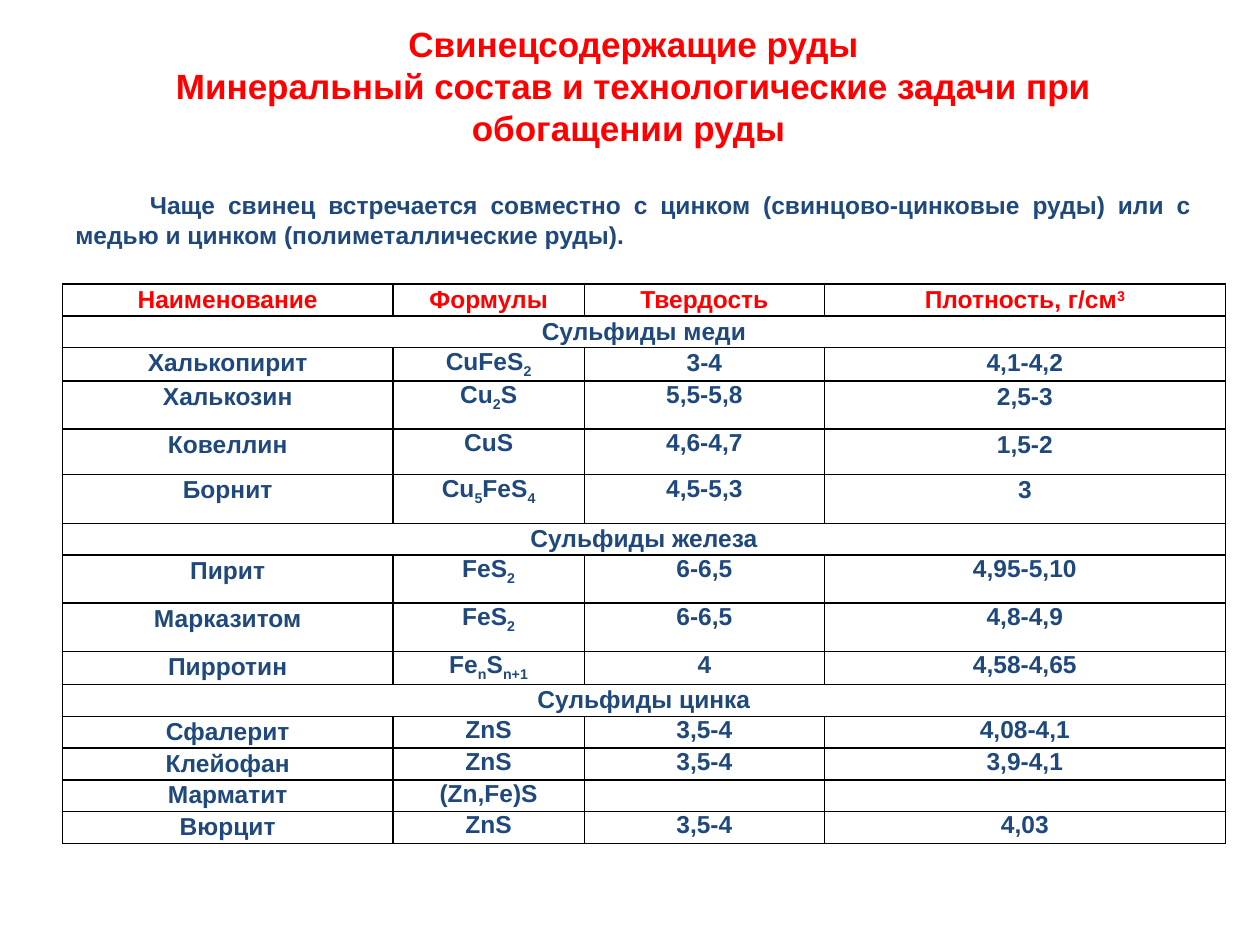
import pptx
import pptx.dml.color
import pptx.enum.text
import pptx.oxml
import pptx.oxml.ns
import pptx.util
from lxml import etree

Cm, Pt = pptx.util.Cm, pptx.util.Pt
PP_ALIGN = pptx.enum.text.PP_ALIGN
RED = pptx.dml.color.RGBColor(0xFF, 0x00, 0x00)
NAVY = pptx.dml.color.RGBColor(0x1F, 0x49, 0x7D)
BLACK = pptx.dml.color.RGBColor(0x00, 0x00, 0x00)

TITLE = ["Свинецсодержащие руды",
         "Минеральный состав и технологические задачи при обогащении руды "]
INTRO = ("Чаще свинец встречается совместно с цинком (свинцово-цинковые руды) "
         "или с медью и цинком (полиметаллические руды). ")
# "|" separates runs; "_" starts a subscript and "^" a superscript
ROWS = [
    ["Наименование", "Формулы", "Твердость", "Плотность, г/см|^3"],
    ["Сульфиды меди"],
    ["Халькопирит", "CuFeS|_2", "3-4", "4,1-4,2"],
    ["Халькозин", "Cu|_2|S", "5,5-5,8", "2,5-3"],
    ["Ковеллин", "CuS", "4,6-4,7", "1,5-2"],
    ["Борнит", "Cu|_5|FeS|_4", "4,5-5,3", "3"],
    ["Сульфиды железа"],
    ["Пирит", "FeS|_2", "6-6,5", "4,95-5,10"],
    ["Марказитом", "FeS|_2", "6-6,5", "4,8-4,9"],
    ["Пирротин", "Fe|_n|S|_n+1", "4", "4,58-4,65"],
    ["Сульфиды цинка"],
    ["Сфалерит", "ZnS", "3,5-4", "4,08-4,1"],
    ["Клейофан", "ZnS", "3,5-4", "3,9-4,1"],
    ["Марматит", "(Zn,Fe)S", "", ""],
    ["Вюрцит", "ZnS", "3,5-4", "4,03"],
]
COL_WIDTHS = [6.66, 3.86, 4.84, 8.08]
ROW_HEIGHT = 0.64
TALL_ROWS = {2: 0.67, 3: 0.97, 4: 0.92, 5: 0.98, 7: 0.97, 8: 0.97, 9: 0.67}
BASELINES = {"_": "-25000", "^": "30000"}


def add_runs(p, text, size, color):
    """Write marked-up text into p as bold Arial runs."""
    for part in text.split("|"):
        r = p.add_run()
        r.text = part.lstrip("_^")
        for name, value in {"name": "Arial", "size": Pt(size), "bold": True}.items():
            setattr(r.font, name, value)
        r.font.color.rgb = color
        if part[0] in BASELINES:
            r.font._element.set("baseline", BASELINES[part[0]])


def add_borders(cell):
    for side in ("lnL", "lnR", "lnT", "lnB"):
        cell._tc.get_or_add_tcPr().append(pptx.oxml.parse_xml(
            f'<a:{side} {pptx.oxml.ns.nsdecls("a")} w="12700"><a:solidFill>'
            f'<a:srgbClr val="{BLACK}"/></a:solidFill></a:{side}>'))


prs = pptx.Presentation()
prs.slide_width, prs.slide_height = Cm(25.4), Cm(19.05)
s = prs.slides.add_slide(prs.slide_layouts[5])

# Title and introduction
title = s.shapes.title
title.left, title.top, title.width, title.height = Cm(1.27), Cm(0.33), Cm(23), Cm(2.82)
intro = s.shapes.add_textbox(Cm(1.27), Cm(3.71), Cm(23), Cm(1.45))
for sp in (title, intro):
    for name, value in {"word_wrap": True,
                        "auto_size": pptx.enum.text.MSO_AUTO_SIZE.NONE,
                        "vertical_anchor": pptx.enum.text.MSO_ANCHOR.TOP}.items():
        setattr(sp.text_frame, name, value)

tf = title.text_frame
for i, line in enumerate(TITLE):
    p = tf.paragraphs[0] if i == 0 else tf.add_paragraph()
    p.alignment = PP_ALIGN.CENTER
    add_runs(p, line, 20, RED)

p = intro.text_frame.paragraphs[0]
p.alignment = PP_ALIGN.JUSTIFY
p._p.get_or_add_pPr().set("indent", str(Cm(1.5)))
add_runs(p, INTRO, 14, NAVY)

# Table of minerals
heights = [TALL_ROWS.get(i, ROW_HEIGHT) for i in range(len(ROWS))]
table = s.shapes.add_table(len(ROWS), len(COL_WIDTHS), Cm(1.26), Cm(5.73),
                           Cm(sum(COL_WIDTHS)), Cm(sum(heights))).table
table.first_row = table.horz_banding = False
for column, width in zip(table.columns, COL_WIDTHS):
    column.width = Cm(width)

for i, texts in enumerate(ROWS):
    table.rows[i].height = Cm(heights[i])
    for cell in table.rows[i].cells:
        for name, value in {"margin_left": Cm(0.15), "margin_right": Cm(0.15),
                            "margin_top": 0, "margin_bottom": 0}.items():
            setattr(cell, name, value)
        add_borders(cell)
        cell.fill.background()
    if len(texts) == 1:
        table.cell(i, 0).merge(table.cell(i, len(COL_WIDTHS) - 1))
    for j, text in enumerate(texts):
        p = table.cell(i, j).text_frame.paragraphs[0]
        p.alignment = PP_ALIGN.CENTER
        if i == 0 or j == 0 or (i, j) == (2, 2) or (j == 3 and i < 6):
            p.line_spacing, p.space_after = 1.07, Pt(8)
        if text:
            add_runs(p, text, 14, RED if i == 0 else NAVY)
        else:
            etree.SubElement(p._p, pptx.oxml.ns.qn("a:endParaRPr"), sz="1400")

prs.save("out.pptx")
